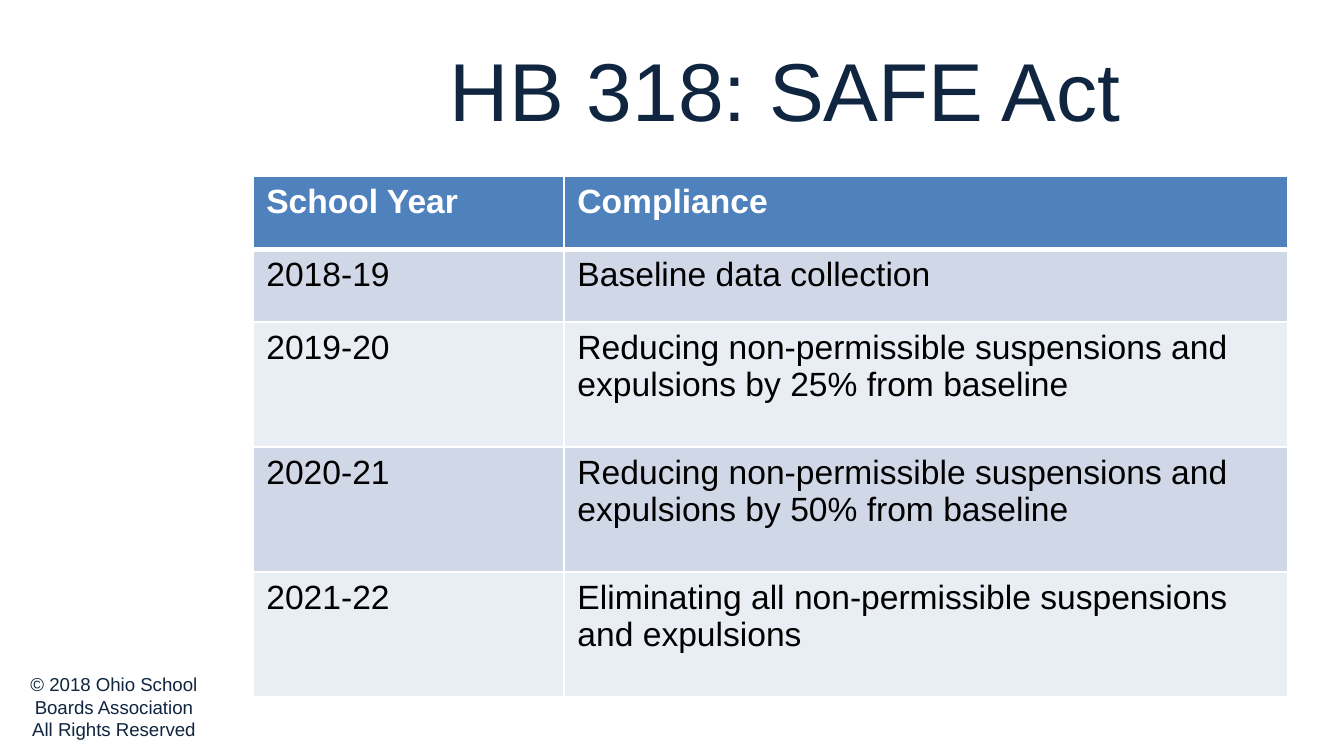
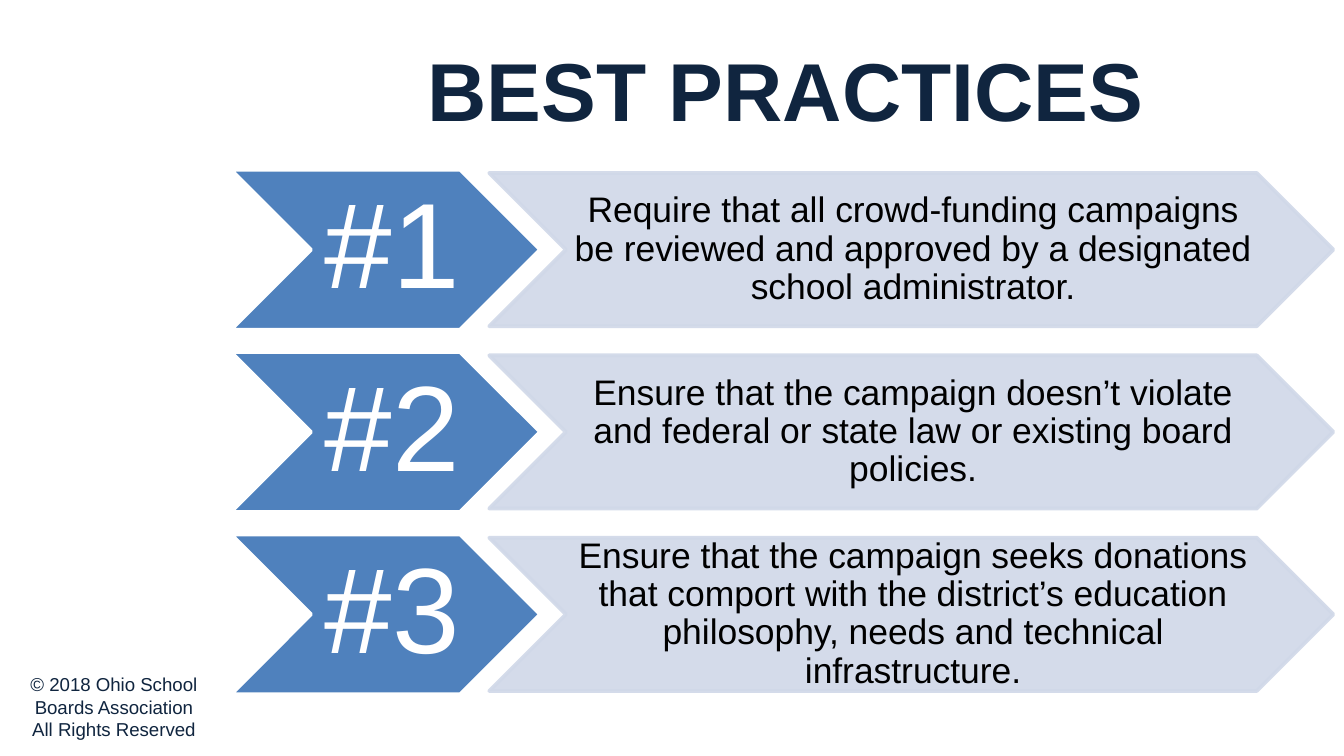
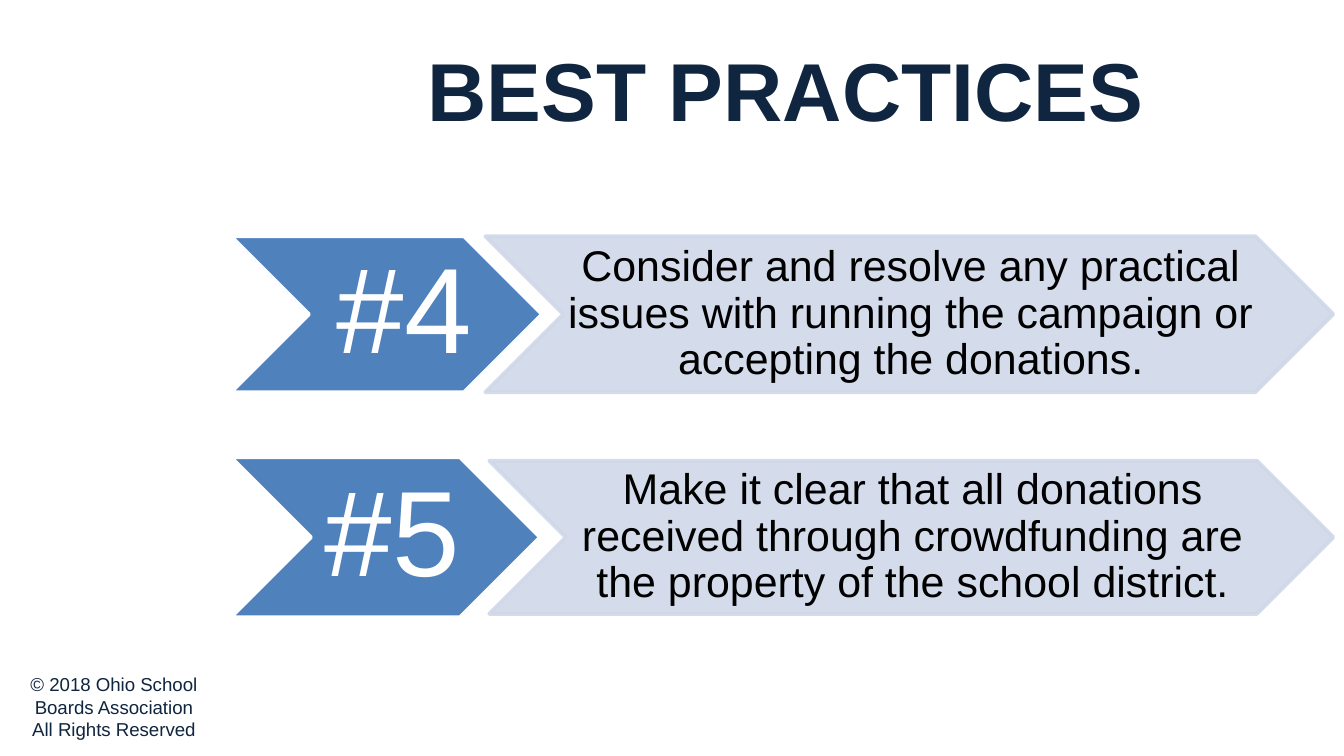
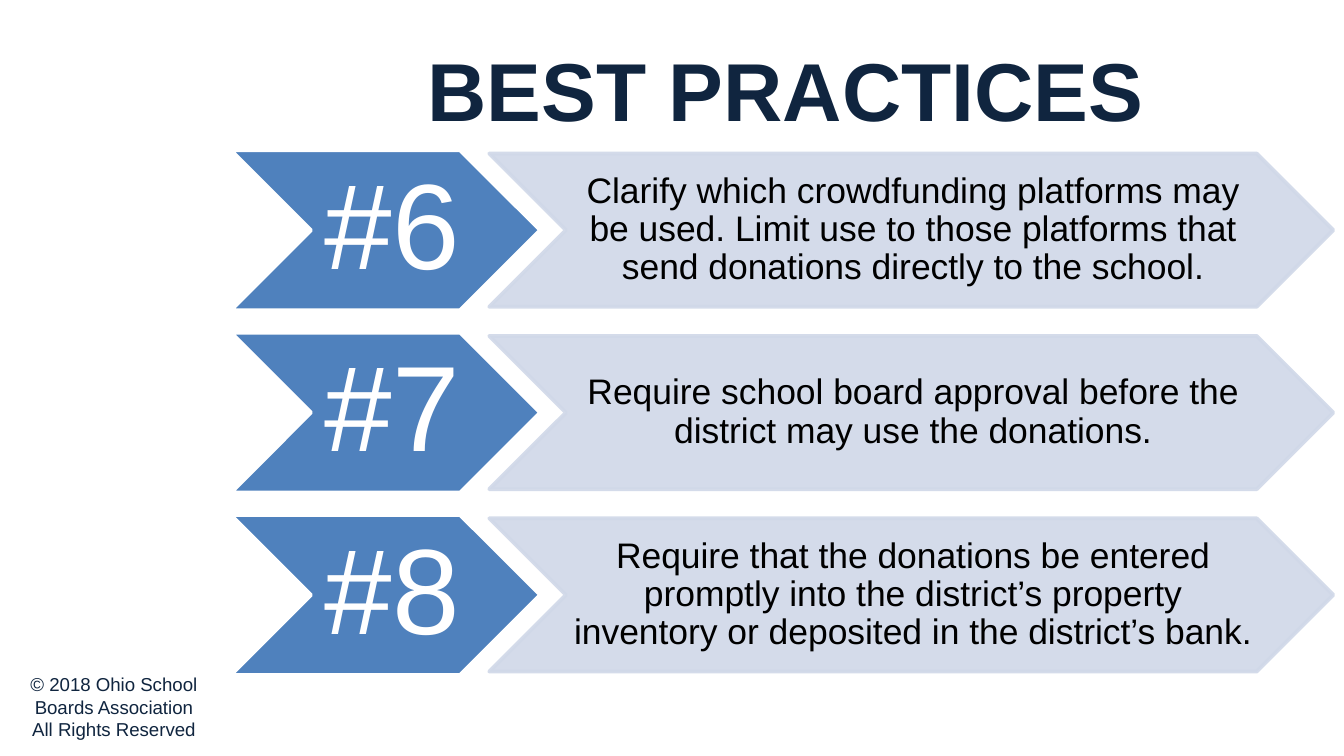
from lxml.etree import SubElement
from pptx import Presentation
from pptx.dml.color import RGBColor
from pptx.enum.shapes import MSO_SHAPE as SHAPE
from pptx.enum.text import MSO_ANCHOR as ANCHOR, MSO_AUTO_SIZE as AUTO, PP_ALIGN as ALIGN
from pptx.oxml import parse_xml
from pptx.oxml.ns import nsdecls, qn
from pptx.util import Pt

NAVY, BLUE, PALE, PALER = "10253F", "4F81BD", "D0D8E8", "E9EDF4"
WHITE, BLACK = "FFFFFF", "000000"
FOOTER = "© 2018 Ohio School\nBoards Association\nAll Rights Reserved"

LEFT, RIGHT, STEP_PITCH = 123.8, 714.3, 97.7
LABEL_LEFT = 167

COMPLIANCE = [
    ("School Year", "Compliance"),
    ("2018-19", "Baseline data collection"),
    ("2019-20", "Reducing non-permissible suspensions and expulsions by 25% from baseline"),
    ("2020-21", "Reducing non-permissible suspensions and expulsions by 50% from baseline"),
    ("2021-22", "Eliminating all non-permissible suspensions and expulsions"),
]
CAMPAIGN_STEPS = [
    "Require that all crowd-funding campaigns be reviewed and approved by a designated school administrator.",
    "Ensure that the campaign doesn’t violate and federal or state law or existing board policies.",
    "Ensure that the campaign seeks donations that comport with the district’s education philosophy, "
    "needs and technical infrastructure.",
]
DONATION_STEPS = [
    "Clarify which crowdfunding platforms may be used. Limit use to those platforms that send donations "
    "directly to the school.",
    "Require school board approval before the district may use the donations.",
    "Require that the donations be entered promptly into the district’s property inventory or deposited "
    "in the district’s bank.",
]


def rgb(color):
    """Turn a hex string into a colour."""
    return RGBColor.from_string(color)


def write(tf, text, size=18, color=BLACK, bold=False, align=ALIGN.LEFT, spacing=None):
    """Fill a text frame, one paragraph per line of text."""
    for i, line in enumerate(text.split("\n")):
        p = tf.add_paragraph() if i else tf.paragraphs[0]
        p.alignment = align
        if spacing:
            p.line_spacing = spacing
        r = p.add_run()
        r.text = line
        r.font.name, r.font.size, r.font.bold = "Arial", Pt(size), bold
        r.font.color.rgb = rgb(color)


def set_borders(cell, top=1, bottom=1):
    """Draw white borders round a table cell."""
    tc_pr = cell._tc.get_or_add_tcPr()
    sides = {"lnL": 1, "lnR": 1, "lnT": top, "lnB": bottom}
    for i, (side, width) in enumerate(sides.items()):
        tc_pr.insert(i, parse_xml(
            f'<a:{side} {nsdecls("a")} w="{Pt(width)}"><a:solidFill>'
            f'<a:srgbClr val="{WHITE}"/></a:solidFill></a:{side}>'))


class Deck:
    """Hold the presentation, its style and the current slide."""

    def __init__(self):
        self.prs = Presentation()
        self.prs.slide_width, self.prs.slide_height = Pt(720), Pt(405)
        self.s = None

    def slide(self, title, bold=True):
        """Start a slide with its footer and title."""
        self.s = self.prs.slides.add_slide(self.prs.slide_layouts[6])
        footer = self.text(0, 357, 122, 44, FOOTER, size=10, color=NAVY)
        footer.text_frame.auto_size = AUTO.SHAPE_TO_FIT_TEXT
        self.text(122, 0, 598, 94.5, title, anchor=ANCHOR.MIDDLE, size=44, color=NAVY, bold=bold)

    def text(self, x, y, w, h, text, anchor=ANCHOR.TOP, insets=(7.2, 3.6, 7.2, 3.6), **fmt):
        """Add a centred text box."""
        sp = self.s.shapes.add_textbox(Pt(x), Pt(y), Pt(w), Pt(h))
        tf = sp.text_frame
        tf.word_wrap, tf.vertical_anchor = True, anchor
        tf.margin_left, tf.margin_top, tf.margin_right, tf.margin_bottom = map(Pt, insets)
        write(tf, text, align=ALIGN.CENTER, **fmt)
        return sp

    def chevron(self, x, y, w, h, fill, line, alpha=100):
        """Add a chevron, opaque to the given percentage."""
        sp = self.s.shapes.add_shape(SHAPE.CHEVRON, Pt(x), Pt(y), Pt(w), Pt(h))
        sp.shadow.inherit = False
        sp.fill.solid()
        sp.fill.fore_color.rgb = rgb(fill)
        sp.line.color.rgb = rgb(line)
        sp.line.width = Pt(2)
        if alpha < 100:
            for clr in sp._element.spPr.iter(qn("a:srgbClr")):
                SubElement(clr, qn("a:alpha"), val=str(alpha * 1000))

    def step(self, y, number, text, size=19, badge_w=165.6, badge_h=85.7, label_w=80,
             arrow_x=262.1, arrow_h=82.1):
        """Add a numbered badge and the arrow that explains it."""
        arrow_y, arrow_w = y + (badge_h - arrow_h) / 2, RIGHT - arrow_x
        self.chevron(LEFT, y, badge_w, badge_h, BLUE, WHITE)
        self.text(LABEL_LEFT, y, label_w, badge_h, f"#{number}", anchor=ANCHOR.MIDDLE,
                  insets=(6.2, 3.6, 0, 3.6), size=65, color=WHITE, spacing=0.9)
        self.chevron(arrow_x, arrow_y, arrow_w, arrow_h, PALE, PALE, alpha=90)
        self.text(arrow_x + arrow_h / 2, arrow_y, arrow_w - arrow_h, arrow_h, text,
                  anchor=ANCHOR.MIDDLE, insets=(2, 1, 0, 1), size=size, spacing=0.9)

    def steps(self, top, first, texts):
        """Stack steps at an equal pitch."""
        for i, text in enumerate(texts):
            self.step(top + i * STEP_PITCH, first + i, text)

    def table(self, x, y, col_widths, row_heights, rows):
        """Add a banded table with a header row."""
        table = self.s.shapes.add_table(len(rows), len(col_widths), Pt(x), Pt(y),
                                        Pt(sum(col_widths)), Pt(sum(row_heights))).table
        for col, width in zip(table.columns, col_widths):
            col.width = Pt(width)
        for i, (row, height) in enumerate(zip(rows, row_heights)):
            table.rows[i].height = Pt(height)
            header = i == 0
            for j, text in enumerate(row):
                cell = table.cell(i, j)
                cell.fill.solid()
                cell.fill.fore_color.rgb = rgb(BLUE if header else PALE if i % 2 else PALER)
                set_borders(cell, top=3 if i == 1 else 1, bottom=3 if header else 1)
                write(cell.text_frame, text, color=WHITE if header else BLACK, bold=header)


def main():
    """Build the four slides."""
    deck = Deck()

    deck.slide("HB 318: SAFE Act", bold=False)
    deck.table(135.5, 94.5, [166.7, 388], [39, 39, 67, 67, 67], COMPLIANCE)

    deck.slide("BEST PRACTICES")
    deck.steps(90.9, 1, CAMPAIGN_STEPS)

    deck.slide("BEST PRACTICES")
    deck.step(126.6, 4, "Consider and resolve any practical issues with running the campaign "
              "or accepting the donations.", size=23, badge_w=166.6, badge_h=83.5, label_w=93,
              arrow_x=260, arrow_h=83.5)
    deck.step(245, 5, "Make it clear that all donations received through crowdfunding are "
              "the property of the school district.", size=23)

    deck.slide("BEST PRACTICES")
    deck.steps(80.5, 6, DONATION_STEPS)

    deck.prs.save("out.pptx")


if __name__ == "__main__":
    main()
